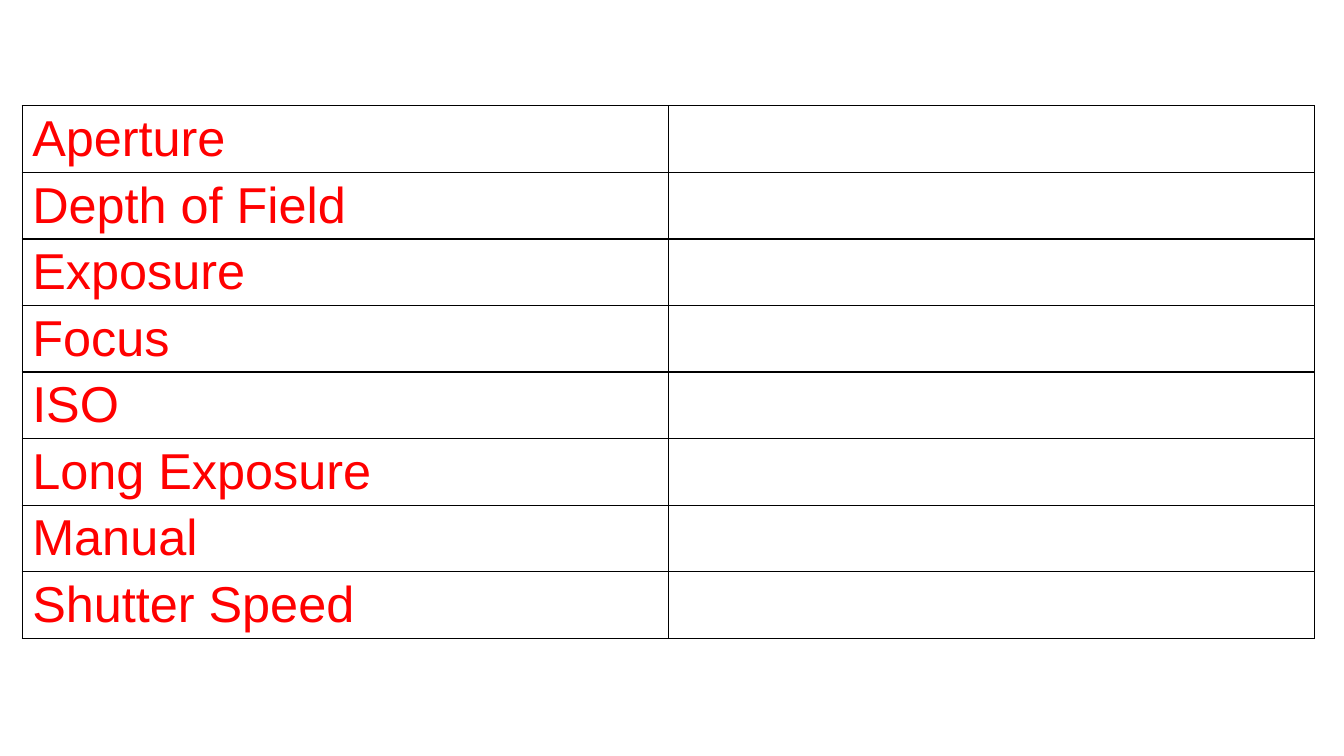
from lxml.etree import SubElement as Sub
from pptx import Presentation
from pptx.dml.color import RGBColor as RGB
from pptx.oxml.ns import qn
from pptx.util import Inches, Pt

COLORS = {"term": "FF0000", "cell": "FFFFFF", "line": "000000"}
TERMS = ["Aperture", "Depth of Field", "Exposure", "Focus", "ISO",
         "Long Exposure", "Manual", "Shutter Speed"]
COLS = 2
COL_W, ROW_H = 6.41, 0.66


def add_borders(cell):
    props = cell._tc.get_or_add_tcPr()
    # Borders must come before the fill in the cell properties
    for i, side in enumerate(("lnL", "lnR", "lnT", "lnB")):
        line = Sub(props, qn(f"a:{side}"), w=str(Pt(1)))
        fill = Sub(line, qn("a:solidFill"))
        Sub(fill, qn("a:srgbClr"), val=COLORS["line"])
        props.insert(i, line)


def style_cell(cell):
    cell.fill.solid()
    cell.fill.fore_color.rgb = RGB.from_string(COLORS["cell"])
    add_borders(cell)


def add_term(cell, term):
    run = cell.text_frame.paragraphs[0].add_run()
    run.text = term
    run.font.name = "Arial"
    run.font.size = Pt(36)
    run.font.color.rgb = RGB.from_string(COLORS["term"])


def add_terms(slide):
    frame = slide.shapes.add_table(
        len(TERMS), COLS, Inches(0.22), Inches(1.05),
        Inches(COL_W * COLS), Inches(ROW_H * len(TERMS)))
    table = frame.table
    table.first_row = table.horz_banding = False
    for col in table.columns:
        col.width = Inches(COL_W)
    for row, term in zip(table.rows, TERMS):
        row.height = Inches(ROW_H)
        for cell in row.cells:
            style_cell(cell)
        add_term(row.cells[0], term)


def main():
    deck = Presentation()
    deck.slide_width, deck.slide_height = Inches(13.33), Inches(7.5)
    slide = deck.slides.add_slide(deck.slide_layouts[6])

    # Glossary: terms on the left, room for definitions on the right
    add_terms(slide)
    deck.save("out.pptx")


if __name__ == "__main__":
    main()
